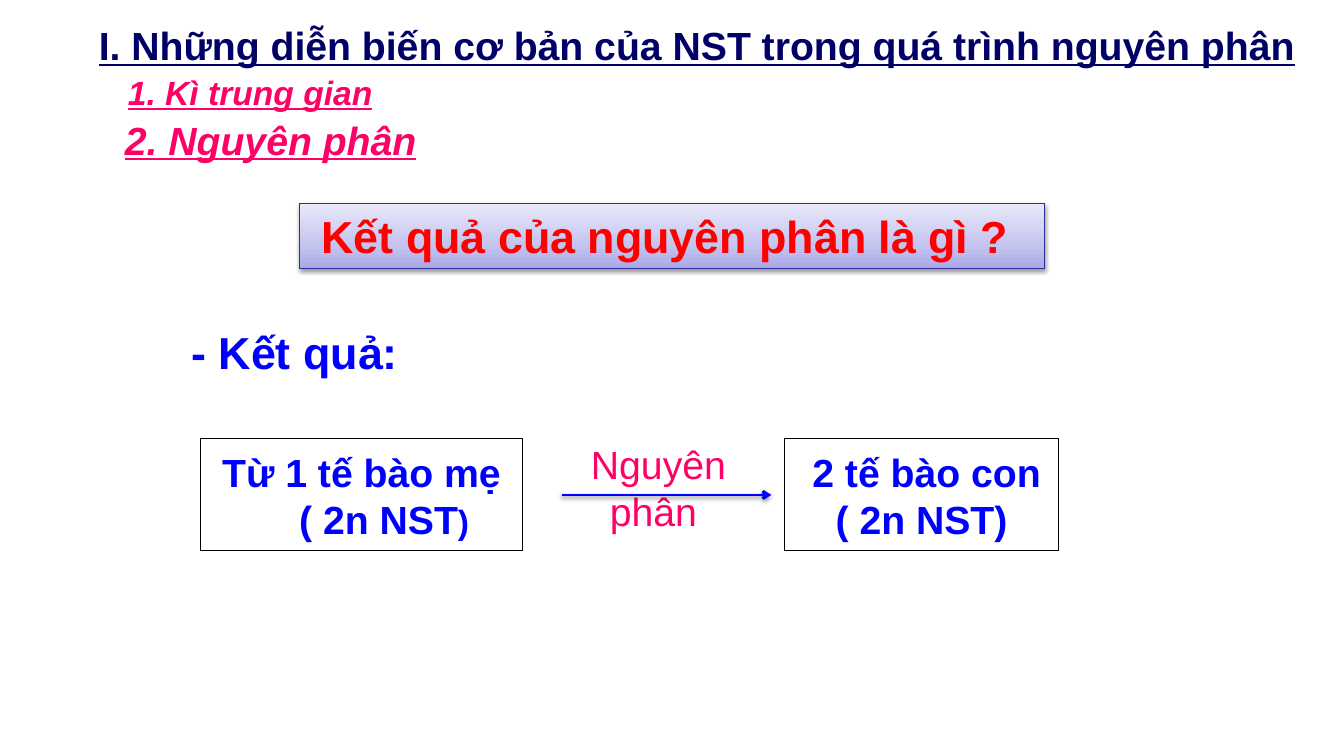
from copy import deepcopy
from dataclasses import dataclass

from lxml.etree import SubElement
from pptx import Presentation
from pptx.dml.color import RGBColor
from pptx.enum.shapes import MSO_CONNECTOR, MSO_SHAPE
from pptx.enum.text import MSO_ANCHOR, MSO_AUTO_SIZE, PP_ALIGN
from pptx.oxml.ns import qn
from pptx.util import Inches, Pt


@dataclass(frozen=True)
class Theme:
    font: str = "Arial"
    navy: str = "000066"
    pink: str = "FF0066"
    blue: str = "0000FF"
    red: str = "FF0000"
    black: str = "000000"
    banner_line: str = "2F2F98"
    banner_stops: tuple = ((0, "A9A9E9"), (0.35, "C4C4EF"), (1, "E8E8FA"))
    large: int = 32
    medium: int = 28
    small: int = 24


class SlideBuilder:
    def __init__(self, page, theme):
        self.page = page
        self.theme = theme

    def fill_text(self, box, lines, size, color, align=PP_ALIGN.LEFT, top=0.05, wrap=True, **styles):
        frame = box.text_frame
        settings = {
            "auto_size": MSO_AUTO_SIZE.NONE, "word_wrap": wrap, "vertical_anchor": MSO_ANCHOR.TOP,
            "margin_left": Inches(0.1), "margin_right": Inches(0.1),
            "margin_top": Inches(top), "margin_bottom": Inches(0.05),
        }
        for name, value in settings.items():
            setattr(frame, name, value)
        for index, (indent, *spans) in enumerate(lines):
            para = frame.add_paragraph() if index else frame.paragraphs[0]
            para.alignment = align
            if indent:
                properties = para._p.get_or_add_pPr()
                properties.set("marL", str(Inches(indent)))
                properties.set("indent", "0")
            for text, *own_size in spans:
                span = para.add_run()
                span.text = text
                font = {"name": self.theme.font, "size": Pt(own_size[0] if own_size else size),
                        "bold": True, **styles}
                for name, value in font.items():
                    setattr(span.font, name, value)
                span.font.color.rgb = RGBColor.from_string(color)

    def title(self, place, text, size, color, **styles):
        box = self.page.shapes.title
        for name, value in zip(("left", "top", "width", "height"), place):
            setattr(box, name, Inches(value))
        self.fill_text(box, [(0, (text,))], size, color, wrap=False, **styles)

    def text(self, place, lines, size, color, **styles):
        box = self.page.shapes.add_textbox(*map(Inches, place))
        self.fill_text(box, lines, size, color, **styles)

    def frame(self, place, line_color, line_width):
        box = self.page.shapes.add_shape(MSO_SHAPE.RECTANGLE, *map(Inches, place))
        box.fill.background()
        box.line.color.rgb = RGBColor.from_string(line_color)
        box.line.width = Pt(line_width)
        box.shadow.inherit = False
        return box

    def cell_box(self, place, lines, line_width):
        box = self.frame(place, self.theme.black, line_width)
        self.fill_text(box, lines, self.theme.medium, self.theme.blue, align=PP_ALIGN.CENTER, top=0.1)

    def banner(self, place, text):
        box = self.frame(place, self.theme.banner_line, 0.75)
        box.fill.gradient()
        box.fill.gradient_angle = 90
        first = box.fill.gradient_stops[0]._gs
        first.addnext(deepcopy(first))
        for stop, (position, color) in zip(box.fill.gradient_stops, self.theme.banner_stops):
            stop.position = position
            stop.color.rgb = RGBColor.from_string(color)
        self.drop_shadow(box._element.spPr.find(qn("a:effectLst")))
        self.fill_text(box, [(0.12, (text,))], self.theme.large, self.theme.red)

    def arrow(self, start, end):
        arrow = self.page.shapes.add_connector(MSO_CONNECTOR.STRAIGHT, *map(Inches, start + end))
        arrow.line.color.rgb = RGBColor.from_string(self.theme.blue)
        arrow.line.width = Pt(2)
        SubElement(arrow.line._get_or_add_ln(), qn("a:tailEnd"), type="arrow")
        self.drop_shadow(SubElement(arrow._element.spPr, qn("a:effectLst")))

    def drop_shadow(self, effects):
        shadow = SubElement(effects, qn("a:outerShdw"), blurRad=str(Pt(3.1)), dist=str(Pt(1.6)),
                            dir="5400000", rotWithShape="0")
        color = SubElement(shadow, qn("a:srgbClr"), val=self.theme.black)
        SubElement(color, qn("a:alpha"), val="38000")


def main():
    deck = Presentation()
    deck.slide_width, deck.slide_height = Inches(13.33), Inches(7.5)
    theme = Theme()
    slide = SlideBuilder(deck.slides.add_slide(deck.slide_layouts[5]), theme)

    slide.title((0.88, 0.16, 12.21, 0.57),
                "I. Những diễn biến cơ bản của NST trong quá trình nguyên phân",
                theme.medium, theme.navy, underline=True)
    for place, heading, size in (
        ((1.17, 0.66, 2.65, 0.5), "1. Kì trung gian", theme.small),
        ((1.14, 1.1, 3.92, 0.57), "2. Nguyên phân", theme.medium),
    ):
        slide.text(place, [(0, (heading,))], size, theme.pink, italic=True, underline=True)

    slide.banner((2.97, 2.02, 7.39, 0.64), "Kết quả của nguyên phân là gì ?")
    slide.text((1.8, 3.17, 3.26, 0.64), [(0, ("- Kết quả:",))], theme.large, theme.blue)

    slide.cell_box((1.99, 4.35, 3.19, 1.11),
                   [(0, ("Từ 1 tế bào mẹ",)), (0.45, ("( 2n NST",), (")", theme.small))], 1)
    slide.text((5.19, 4.32, 2.58, 1.04), [(0.1, ("Nguyên",)), (0, ("phân",))],
               theme.medium, theme.pink, align=PP_ALIGN.CENTER, bold=False)
    slide.cell_box((7.78, 4.35, 2.72, 1.11),
                   [(0.1, ("2 tế bào con",)), (0, ("( 2n NST)",))], 0.25)
    slide.arrow((5.57, 4.91), (7.65, 4.91))

    deck.save("out.pptx")


if __name__ == "__main__":
    main()
